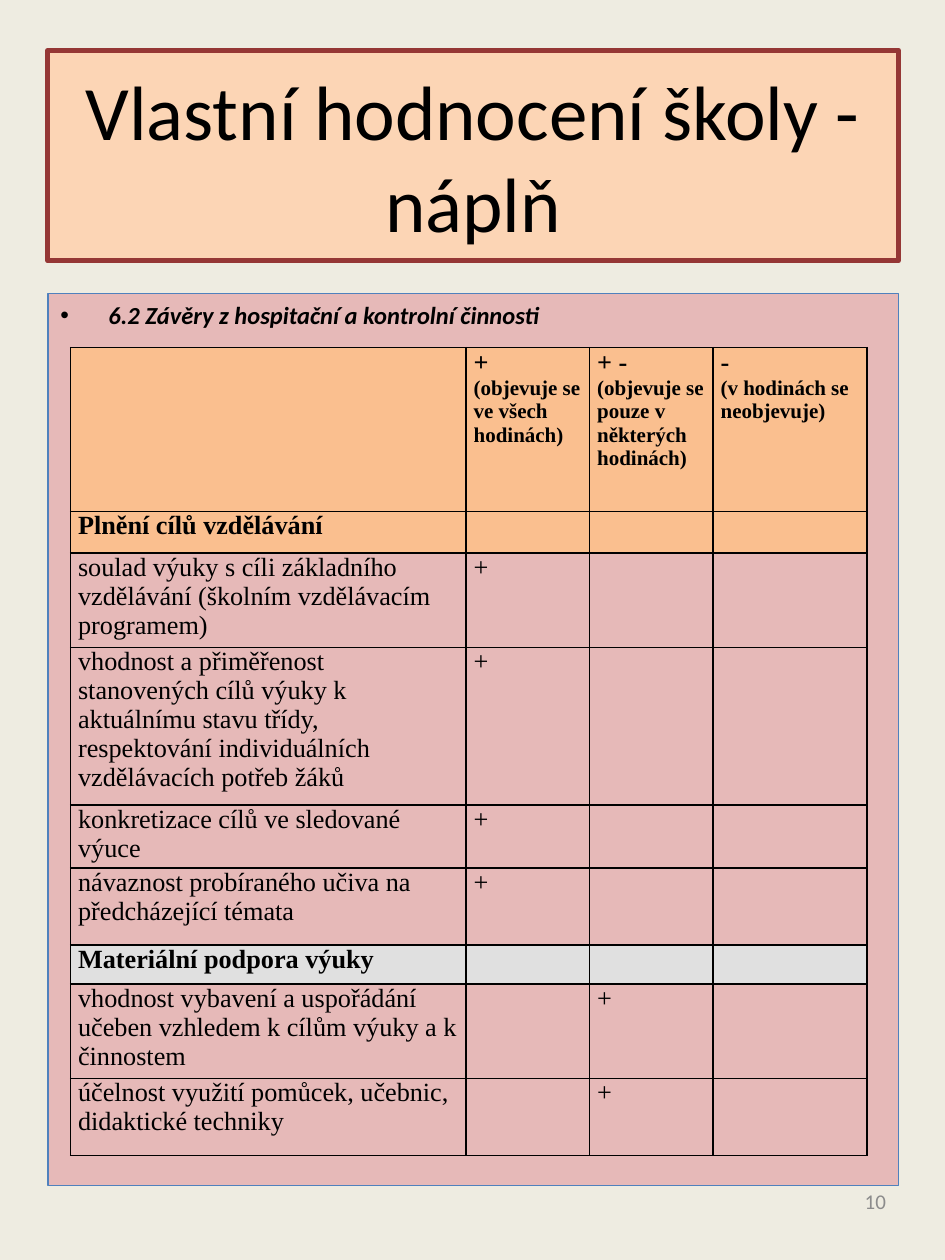
from dataclasses import dataclass

from lxml import etree
from pptx import Presentation
from pptx import util as u
from pptx.dml.color import RGBColor
from pptx.enum import text
from pptx.oxml.ns import qn

COLORS = {
    "page": "EEECE1", "title": "FCD5B5", "title_line": "953735",
    "body": "E6B9B8", "body_line": "4F81BD", "header": "FABF8F",
    "section": "E0E0E0", "ink": "000000", "number": "8C8C8C",
}
COLUMNS = [3.14, 0.98, 0.98, 1.22]


@dataclass
class Row:
    height: float
    cells: tuple[str, ...]
    fill: str = ""
    bold: bool = False


ROWS = [
    Row(1.3, ("", "+\n(objevuje se ve všech hodinách)",
              "+ -\n(objevuje se pouze v některých hodinách)",
              "-\n(v hodinách se neobjevuje)"), "header", True),
    Row(0.33, ("Plnění cílů vzdělávání", "", "", ""), "header", True),
    Row(0.75, ("soulad výuky s cíli základního vzdělávání "
               "(školním vzdělávacím programem)", "+", "", "")),
    Row(1.25, ("vhodnost a přiměřenost stanovených cílů výuky k aktuálnímu stavu třídy,  "
               "respektování individuálních vzdělávacích potřeb žáků", "+", "", "")),
    Row(0.5, ("konkretizace cílů ve sledované výuce", "+", "", "")),
    Row(0.61, ("návaznost probíraného učiva na předcházející témata", "+", "", "")),
    Row(0.31, ("Materiální podpora výuky", "", "", ""), "section", True),
    Row(0.75, ("vhodnost vybavení a uspořádání učeben vzhledem k cílům výuky "
               "a k činnostem", "", "+", "")),
    Row(0.61, ("účelnost využití pomůcek, učebnic, didaktické techniky", "", "+", "")),
]


def rgb(name: str) -> RGBColor:
    return RGBColor.from_string(COLORS[name])


def add_span(para, words: str, size: float, font: str = "Calibri", color: str = "ink",
             bold: bool = False, italic: bool = False) -> None:
    span = para.add_run()
    span.text = words
    span.font.name, span.font.size = font, u.Pt(size)
    span.font.bold, span.font.italic = bold, italic
    span.font.color.rgb = rgb(color)


def place_panel(box, left: float, top: float, width: float, height: float,
                fill: str, line: str, weight: float) -> None:
    """Move a placeholder and give it a fill and an outline."""
    box.left, box.top = u.Inches(left), u.Inches(top)
    box.width, box.height = u.Inches(width), u.Inches(height)
    box.fill.solid()
    box.fill.fore_color.rgb = rgb(fill)
    box.line.color.rgb = rgb(line)
    box.line.width = u.Pt(weight)
    box.text_frame.word_wrap = True
    box.text_frame.auto_size = text.MSO_AUTO_SIZE.NONE


def add_borders(cell) -> None:
    properties = cell._tc.get_or_add_tcPr()
    for position, side in enumerate(("a:lnL", "a:lnR", "a:lnT", "a:lnB")):
        line = etree.Element(qn(side), w=str(u.Pt(1)))
        fill = etree.SubElement(line, qn("a:solidFill"))
        etree.SubElement(fill, qn("a:srgbClr"), val=COLORS["ink"])
        properties.insert(position, line)


def fill_cell(cell, words: str, row: Row) -> None:
    cell.margin_left = cell.margin_right = u.Inches(0.06)
    cell.margin_top = cell.margin_bottom = 0
    if row.fill:
        cell.fill.solid()
        cell.fill.fore_color.rgb = rgb(row.fill)
    else:
        cell.fill.background()
    add_borders(cell)
    if not words:
        return
    frame = cell.text_frame
    for index, part in enumerate(words.split("\n")):
        para = frame.add_paragraph() if index else frame.paragraphs[0]
        add_span(para, part, 12 if index else 15, "Times New Roman", bold=row.bold)


def add_criteria_table(page) -> None:
    frame = page.shapes.add_table(
        len(ROWS), len(COLUMNS), u.Inches(0.56), u.Inches(2.76),
        u.Inches(sum(COLUMNS)), u.Inches(sum(row.height for row in ROWS)))
    table = frame.table
    table.first_row = table.horz_banding = False
    for column, width in zip(table.columns, COLUMNS):
        column.width = u.Inches(width)
    for table_row, row in zip(table.rows, ROWS):
        table_row.height = u.Inches(row.height)
        for cell, words in zip(table_row.cells, row.cells):
            fill_cell(cell, words, row)


def add_page_number(page) -> None:
    box = page.shapes.add_textbox(u.Inches(5.38), u.Inches(9.27), u.Inches(1.75), u.Inches(0.53))
    box.text_frame.word_wrap = True
    box.text_frame.vertical_anchor = text.MSO_ANCHOR.MIDDLE
    para = box.text_frame.paragraphs[0]
    para.alignment = text.PP_ALIGN.RIGHT
    add_span(para, "10", 12, color="number")


def main() -> None:
    deck = Presentation()
    deck.slide_width, deck.slide_height = u.Inches(7.5), u.Inches(10)
    page = deck.slides.add_slide(deck.slide_layouts[1])
    page.background.fill.solid()
    page.background.fill.fore_color.rgb = rgb("page")

    title, body = page.placeholders
    place_panel(title, 0.38, 0.4, 6.75, 1.67, "title", "title_line", 3)
    title.text_frame.vertical_anchor = text.MSO_ANCHOR.MIDDLE
    para = title.text_frame.paragraphs[0]
    para.alignment = text.PP_ALIGN.CENTER
    add_span(para, "Vlastní hodnocení školy - náplň", 44)

    place_panel(body, 0.38, 2.33, 6.75, 7.08, "body", "body_line", 0.75)
    para = body.text_frame.paragraphs[0]
    indent = u.Inches(0.38)
    layout = para._p.get_or_add_pPr()
    layout.set("marL", str(indent))
    layout.set("indent", str(-indent))
    etree.SubElement(layout, qn("a:buChar"), char="•")
    add_span(para, "6.2 Závěry z hospitační a kontrolní činnosti", 14, bold=True, italic=True)

    add_criteria_table(page)
    add_page_number(page)
    deck.save("out.pptx")


if __name__ == "__main__":
    main()
